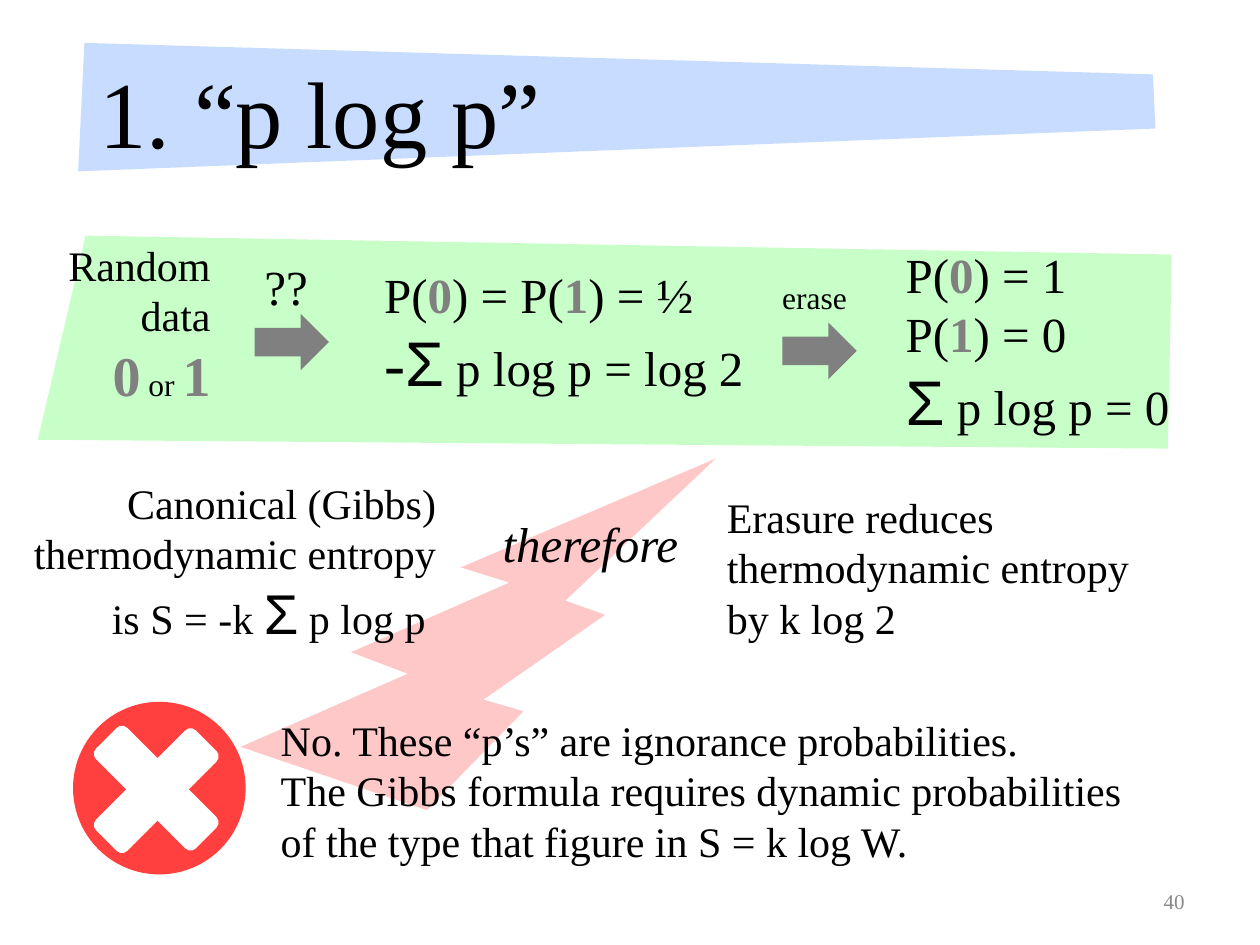
"""Build the "p log p" slide on erasure and thermodynamic entropy."""
from dataclasses import dataclass

from pptx import Presentation
from pptx.dml.color import RGBColor
from pptx.enum.shapes import MSO_SHAPE
from pptx.enum.text import MSO_ANCHOR, MSO_AUTO_SIZE, PP_ALIGN
from pptx.oxml.ns import qn
from pptx.util import Inches, Pt

LEFT, RIGHT = PP_ALIGN.LEFT, PP_ALIGN.RIGHT
TOP, MIDDLE = MSO_ANCHOR.TOP, MSO_ANCHOR.MIDDLE
FIT, FIXED = MSO_AUTO_SIZE.SHAPE_TO_FIT_TEXT, MSO_AUTO_SIZE.NONE
BOLT, OVAL = MSO_SHAPE.LIGHTNING_BOLT, MSO_SHAPE.OVAL
BAR, ARROW = MSO_SHAPE.ROUNDED_RECTANGLE, MSO_SHAPE.RIGHT_ARROW


@dataclass(frozen=True)
class Theme:
    """Colours, fonts and type sizes."""
    ink: str = "000000"
    gray: str = "808080"
    number: str = "898989"
    white: str = "FFFFFF"
    red: str = "FF403F"
    pink: str = "FFC8C8"
    green: str = "C8FFC8"
    blue: str = "C8DCFF"
    serif: str = "Times New Roman"
    sans: str = "Arial"
    title: int = 54
    sigma: int = 36
    bit: int = 32
    formula: int = 28
    body: int = 24
    label: int = 18
    page: int = 12


T = Theme()


@dataclass(frozen=True)
class Run:
    """A run that departs from the format of its text."""
    text: str
    size: int | None = None
    font: str = T.serif
    color: str | None = None
    bold: bool = False


@dataclass(frozen=True)
class Text:
    """A text box with its place and format."""
    at: tuple
    paragraphs: list
    size: int = T.body
    align: PP_ALIGN = LEFT
    wrap: bool = True
    italic: bool = False
    color: str = T.ink
    anchor: MSO_ANCHOR = TOP
    fit: MSO_AUTO_SIZE = FIT


@dataclass(frozen=True)
class Shape:
    """A filled preset shape."""
    kind: MSO_SHAPE
    at: tuple
    color: str
    rotation: float = 0
    flip: bool = False


def bit(value: str, size: int | None = None) -> Run:
    """Return a bold gray binary digit."""
    return Run(value, size, color=T.gray, bold=True)


def paint(sp, color: str) -> None:
    """Give a shape a plain fill without line or shadow."""
    sp.shadow.inherit = False
    sp.fill.solid()
    sp.fill.fore_color.rgb = RGBColor.from_string(color)
    sp.line.fill.background()


def write(tf, paragraphs: list, *, size: int, align=LEFT, wrap=True, italic=False,
          color=T.ink, anchor=TOP, fit=FIXED) -> None:
    """Fill a text frame with paragraphs of strings and runs."""
    tf.word_wrap, tf.vertical_anchor, tf.auto_size = wrap, anchor, fit
    for i, items in enumerate(paragraphs):
        p = tf.add_paragraph() if i else tf.paragraphs[0]
        p.alignment = align
        for item in items:
            run = Run(item) if isinstance(item, str) else item
            for j, line in enumerate(run.text.split("\n")):
                if j:
                    p.add_line_break()
                r = p.add_run()
                r.text = line
                r.font.name, r.font.size = run.font, Pt(run.size or size)
                r.font.bold, r.font.italic = run.bold, italic
                r.font.color.rgb = RGBColor.from_string(run.color or color)


def add_text(s, text: Text) -> None:
    """Add a text box."""
    tf = s.shapes.add_textbox(*map(Inches, text.at)).text_frame
    write(tf, text.paragraphs, size=text.size, align=text.align, wrap=text.wrap,
          italic=text.italic, color=text.color, anchor=text.anchor, fit=text.fit)


def add_shape(s, shape: Shape) -> None:
    """Add a preset shape."""
    sp = s.shapes.add_shape(shape.kind, *map(Inches, shape.at))
    sp.rotation = shape.rotation
    if shape.flip:
        sp.element.spPr.find(qn("a:xfrm")).set("flipV", "1")
    paint(sp, shape.color)


def add_band(s, points: list, color: str) -> None:
    """Add a filled polygon."""
    start, *rest = [(Inches(x), Inches(y)) for x, y in points]
    builder = s.shapes.build_freeform(*start)
    builder.add_line_segments(rest, close=True)
    paint(builder.convert_to_shape(), color)


def add_title(s, text: str) -> None:
    """Place the title above the band behind it."""
    sp = s.shapes.title
    sp.left, sp.top, sp.width, sp.height = map(Inches, (0.69, 0.4, 8.62, 0.95))
    write(sp.text_frame, [[text]], size=T.title, anchor=MIDDLE)
    sp.element.getparent().append(sp.element)


SHAPES = [
    Shape(BOLT, (1.91, 3.64, 3.77, 2.79), T.pink, flip=True),
    Shape(OVAL, (0.58, 5.57, 1.37, 1.37), T.red),
    Shape(BAR, (0.68, 6.1, 1.12, 0.35), T.white, rotation=315),
    Shape(BAR, (0.68, 6.08, 1.12, 0.35), T.white, rotation=45),
]
ARROWS = [Shape(ARROW, (x, y, 0.59, 0.45), T.gray) for x, y in ((2.02, 2.49), (6.21, 2.56))]
BANDS = [
    ([(0.68, 1.87), (9.3, 2.02), (9.27, 3.56), (0.3, 3.49)], T.green),
    ([(0.67, 0.34), (9.15, 0.59), (9.17, 1.02), (0.62, 1.36)], T.blue),
]
SIGMA = Run("Σ", T.sigma, T.sans)
TEXTS = [
    Text((2.13, 5.62, 6.9, 1.31), [[
        "No. These “p’s” are ignorance probabilities.\nThe Gibbs formula requires "
        "dynamic probabilities of the type that figure in S = k log W."]]),
    Text((7.17, 6.95, 2.33, 0.4), [["40"]], T.page, RIGHT, color=T.number,
         anchor=MIDDLE, fit=FIXED),
    Text((0.4, 1.85, 1.37, 1.45), [
        ["Random data"], [bit("0", T.bit), Run(" or ", T.label), bit("1", T.bit)]],
        align=RIGHT),
    Text((2.95, 2.05, 3.05, 1.18), [
        ["P(", bit("0"), ") = P(", bit("1"), ") = ½"],
        [Run("-", T.sigma), SIGMA, " p log p = log 2"]], T.formula, wrap=False),
    Text((7.09, 1.89, 2.3, 1.65), [
        ["P(", bit("0"), ") = 1"], ["P(", bit("1"), ") = 0"],
        [SIGMA, " p log p = 0"]], T.formula, wrap=False),
    Text((0, 3.74, 3.56, 1.45), [[
        "Canonical (Gibbs) thermodynamic entropy is S = -k ",
        Run("Σ", T.bit, T.sans), " p log p "]], align=RIGHT),
    Text((6.11, 2.16, 0.72, 0.4), [["erase"]], T.label, wrap=False),
    Text((2, 1.99, 0.55, 0.57), [["??"]], T.formula, wrap=False),
    Text((3.89, 4.03, 1.62, 0.57), [["therefore"]], T.formula, wrap=False, italic=True),
    Text((5.67, 3.85, 3.64, 1.31), [["Erasure reduces thermodynamic entropy by k log 2"]]),
]


def main() -> None:
    """Draw the slide from back to front and save it."""
    prs = Presentation()
    prs.slide_width, prs.slide_height = Inches(10), Inches(7.5)
    s = prs.slides.add_slide(prs.slide_layouts[5])
    for shape in SHAPES:
        add_shape(s, shape)
    for points, color in BANDS:
        add_band(s, points, color)
    add_title(s, "1. “p log p”")
    for arrow in ARROWS:
        add_shape(s, arrow)
    for text in TEXTS:
        add_text(s, text)
    prs.save("out.pptx")


if __name__ == "__main__":
    main()
